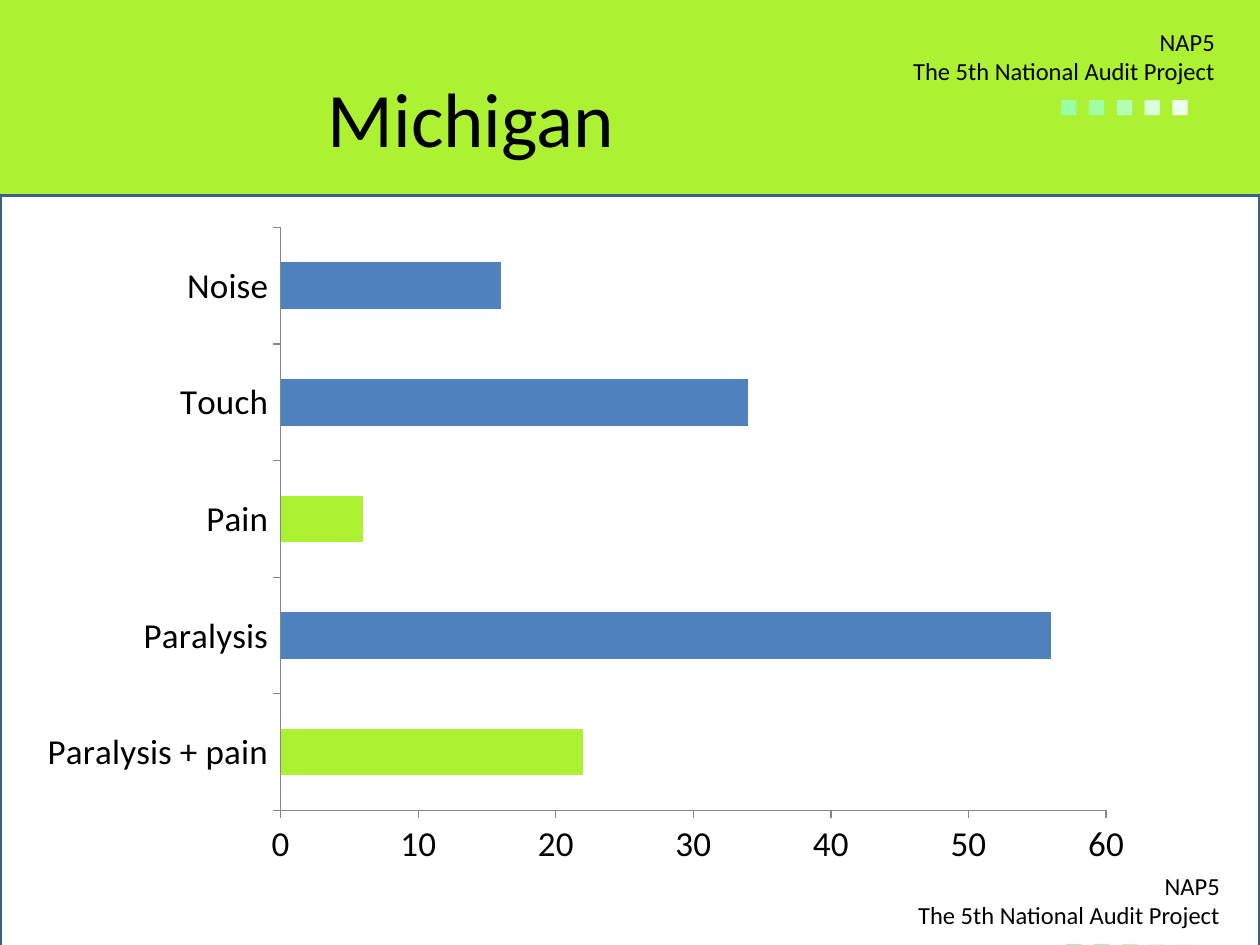
import pptx
import pptx.chart.data
import pptx.dml.color
import pptx.enum.chart
import pptx.enum.shapes
import pptx.enum.text
import pptx.util
from pptx.util import Inches, Pt

HUES = {"lime": "ADF232", "white": "FFFFFF", "edge": "3A5F8C",
        "black": "000000", "blue": "4F81BD", "axis": "868686"}
FADE = ["99FFA4", "A0FFA3", "B3FFB5", "DAFFDB", "EDFFED"]
ALIGN = pptx.enum.text.PP_ALIGN
MIDDLE = pptx.enum.text.MSO_ANCHOR.MIDDLE


def paint(fill, hue):
    fill.solid()
    fill.fore_color.rgb = pptx.dml.color.RGBColor.from_string(hue)


def style(font, size, face="Calibri", hue=HUES["black"]):
    font.size = Pt(size)
    font.name = face
    font.color.rgb = pptx.dml.color.RGBColor.from_string(hue)


deck = pptx.Presentation()
deck.slide_width, deck.slide_height = Inches(10), Inches(7.5)
slide = deck.slides.add_slide(deck.slide_layouts[5])
paint(slide.background.fill, HUES["lime"])

# White panel below the header
panel = slide.shapes.add_shape(pptx.enum.shapes.MSO_SHAPE.RECTANGLE,
                               Inches(0), Inches(1.55), Inches(10), Inches(6.38))
panel.shadow.inherit = False
paint(panel.fill, HUES["white"])
paint(panel.line.fill, HUES["edge"])
panel.line.width = Pt(2)

# Project marks, top and bottom
for left, top in [(6.57, 0.2), (6.61, 6.9)]:
    mark = slide.shapes.add_textbox(Inches(left), Inches(top), Inches(3.17), Inches(0.79))
    frame = mark.text_frame
    frame.word_wrap = True
    frame.vertical_anchor = MIDDLE
    frame.text = "NAP5\nThe 5th National Audit Project"
    for para in frame.paragraphs:
        para.alignment = ALIGN.RIGHT
        style(para.font, 14)
    dots = frame.add_paragraph()
    dots.alignment = ALIGN.LEFT
    props = dots._p.get_or_add_pPr()
    props.set("marL", str(Inches(1.74)))
    props.set("indent", "0")
    for i, hue in enumerate(FADE):
        run = dots.add_run()
        run.text = "■ " if i < len(FADE) - 1 else "■"
        style(run.font, 18, "Arial", hue)

# Title, in front of the panel and marks
title = slide.shapes.title
title.element.getparent().append(title.element)
title.left, title.top = Inches(0.5), Inches(0.3)
title.width, title.height = Inches(9), Inches(1.25)
title.text_frame.text = "Michigan"
title.text_frame.vertical_anchor = MIDDLE
title.text_frame.margin_left = Inches(2.1)
head = title.text_frame.paragraphs[0]
head.alignment = ALIGN.LEFT
style(head.font, 44)

# Bar chart
data = pptx.chart.data.CategoryChartData()
data.categories = ["Paralysis + pain", "Paralysis", "Pain", "Touch", "Noise"]
data.add_series("Series 1", [22, 56, 6, 34, 16])
chart = slide.shapes.add_chart(pptx.enum.chart.XL_CHART_TYPE.BAR_CLUSTERED,
                               Inches(0.2), Inches(1.7), Inches(8.9), Inches(5.28),
                               data).chart
style(chart.font, 10)
chart.has_legend = False
chart.has_title = False
plot = chart.plots[0]
plot.gap_width = 150
plot.vary_by_categories = False
bars = plot.series[0]
paint(bars.format.fill, HUES["blue"])
for i in (0, 2):
    paint(bars.points[i].format.fill, HUES["lime"])

# Axes
for axis in (chart.category_axis, chart.value_axis):
    axis.has_major_gridlines = False
    axis.major_tick_mark = pptx.enum.chart.XL_TICK_MARK.OUTSIDE
    axis.minor_tick_mark = pptx.enum.chart.XL_TICK_MARK.NONE
    paint(axis.format.line.fill, HUES["axis"])
    style(axis.tick_labels.font, 20)
chart.value_axis.minimum_scale = 0
chart.value_axis.maximum_scale = 60
chart.value_axis.major_unit = 10

deck.save("out.pptx")
